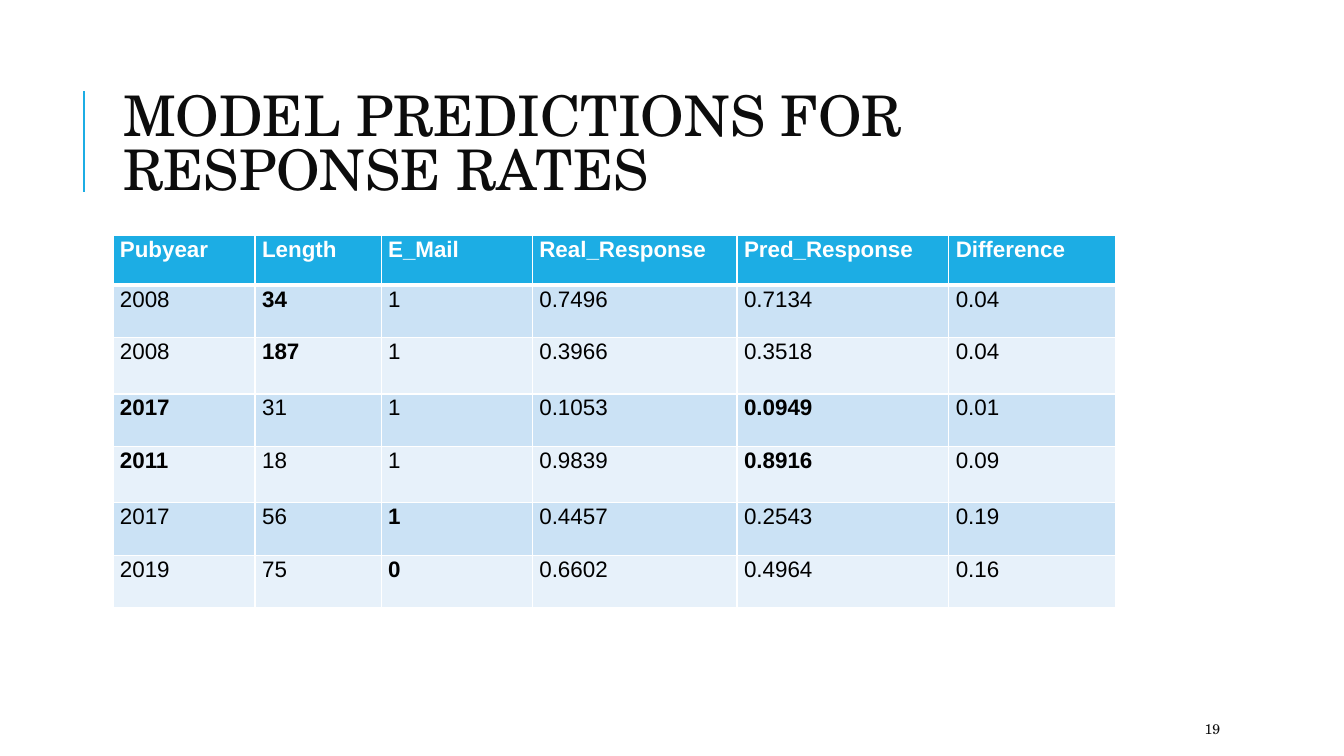
from lxml import etree
from pptx import Presentation
from pptx.dml.color import RGBColor
from pptx.enum.shapes import MSO_CONNECTOR
from pptx.enum.text import MSO_ANCHOR, MSO_AUTO_SIZE, PP_ALIGN
from pptx.oxml.ns import qn
from pptx.util import Inches, Pt

STRAIGHT = MSO_CONNECTOR.STRAIGHT
MIDDLE = MSO_ANCHOR.MIDDLE
LEFT = PP_ALIGN.LEFT
NO_AUTOFIT = MSO_AUTO_SIZE.NONE

BLUE = RGBColor(0x1C, 0xAD, 0xE4)
BAND_DARK = RGBColor(0xCB, 0xE2, 0xF5)
BAND_LIGHT = RGBColor(0xE7, 0xF1, 0xFA)
WHITE = RGBColor(0xFF, 0xFF, 0xFF)
BLACK = RGBColor(0, 0, 0)
INK = RGBColor(0x0C, 0x0C, 0x0C)

SERIF = "TeX Gyre Schola"
SANS = "Arial"

HEADINGS = ["Pubyear", "Length", "E_Mail", "Real_Response", "Pred_Response", "Difference"]
PREDICTIONS = [
    ["2008", "34", "1", "0.7496", "0.7134", "0.04"],
    ["2008", "187", "1", "0.3966", "0.3518", "0.04"],
    ["2017", "31", "1", "0.1053", "0.0949", "0.01"],
    ["2011", "18", "1", "0.9839", "0.8916", "0.09"],
    ["2017", "56", "1", "0.4457", "0.2543", "0.19"],
    ["2019", "75", "0", "0.6602", "0.4964", "0.16"],
]
BOLD_COLUMNS = [{1}, {1}, {0, 4}, {0, 4}, {2}, {2}]
COLUMN_WIDTHS = [1.41, 1.25, 1.5, 2.03, 2.1, 1.65]
ROW_HEIGHTS = [0.49, 0.52, 0.56, 0.52, 0.56, 0.52, 0.52]


def write_text(frame, text, font=SERIF, size=16, color=INK, bold=False, spacing=1.0):
    para = frame.paragraphs[0]
    para.alignment = LEFT
    para.line_spacing = spacing
    span = para.add_run()
    span.text = text
    span.font.name = font
    span.font.size = Pt(size)
    span.font.color.rgb = color
    span.font.bold = bold


def set_border(cell, side, width):
    properties = cell._tc.get_or_add_tcPr()
    line = etree.SubElement(properties, qn(f"a:{side}"), w=str(Pt(width)))
    fill = etree.SubElement(line, qn("a:solidFill"))
    etree.SubElement(fill, qn("a:srgbClr"), val=str(WHITE))


def add_heading(page, left, top, width, height):
    rule_left = Inches(left - 0.29)
    rule = page.shapes.add_connector(
        STRAIGHT, rule_left, Inches(top + 1.26), rule_left, Inches(top + 0.26))
    rule.line.color.rgb = BLUE
    rule.line.width = Pt(1.5)
    etree.SubElement(rule._element.spPr, qn("a:effectLst"))

    title = page.shapes.title
    title.left, title.top = Inches(left), Inches(top)
    title.width, title.height = Inches(width), Inches(height)
    frame = title.text_frame
    frame.word_wrap = True
    frame.auto_size = NO_AUTOFIT
    frame.vertical_anchor = MIDDLE
    write_text(frame, "MODEL PREDICTIONS FOR RESPONSE RATES", size=40, spacing=0.8)


def add_page_number(page, left, top, width, height):
    box = page.shapes.add_textbox(Inches(left), Inches(top), Inches(width), Inches(height))
    box.text_frame.word_wrap = True
    box.text_frame.vertical_anchor = MIDDLE
    write_text(box.text_frame, "19", size=10)


def add_prediction_table(page, left, top):
    rows = [HEADINGS] + PREDICTIONS
    table = page.shapes.add_table(
        len(rows), len(HEADINGS), Inches(left), Inches(top),
        Inches(sum(COLUMN_WIDTHS)), Inches(sum(ROW_HEIGHTS))).table
    for column, width in zip(table.columns, COLUMN_WIDTHS):
        column.width = Inches(width)
    for row, height in zip(table.rows, ROW_HEIGHTS):
        row.height = Inches(height)
    for row_index, values in enumerate(rows):
        header = row_index == 0
        band = BAND_DARK if row_index % 2 else BAND_LIGHT
        for column_index, value in enumerate(values):
            cell = table.cell(row_index, column_index)
            cell.margin_left = cell.margin_right = Inches(0.07)
            cell.margin_top = cell.margin_bottom = 0
            for side in ("lnL", "lnR"):
                set_border(cell, side, 1)
            set_border(cell, "lnT", 3 if row_index == 1 else 1)
            set_border(cell, "lnB", 3 if header else 1)
            cell.fill.solid()
            cell.fill.fore_color.rgb = BLUE if header else band
            write_text(
                cell.text_frame, value, font=SANS, spacing=1.07,
                color=WHITE if header else BLACK,
                bold=header or column_index in BOLD_COLUMNS[row_index - 1])


def main():
    deck = Presentation()
    deck.slide_width, deck.slide_height = Inches(13.33), Inches(7.5)
    page = deck.slides.add_slide(deck.slide_layouts[5])
    add_heading(page, 1.12, 0.64, 10.63, 1.64)
    add_prediction_table(page, 1.12, 2.34)
    add_page_number(page, 11.85, 7.08, 1.06, 0.3)
    deck.save("out.pptx")


if __name__ == "__main__":
    main()
